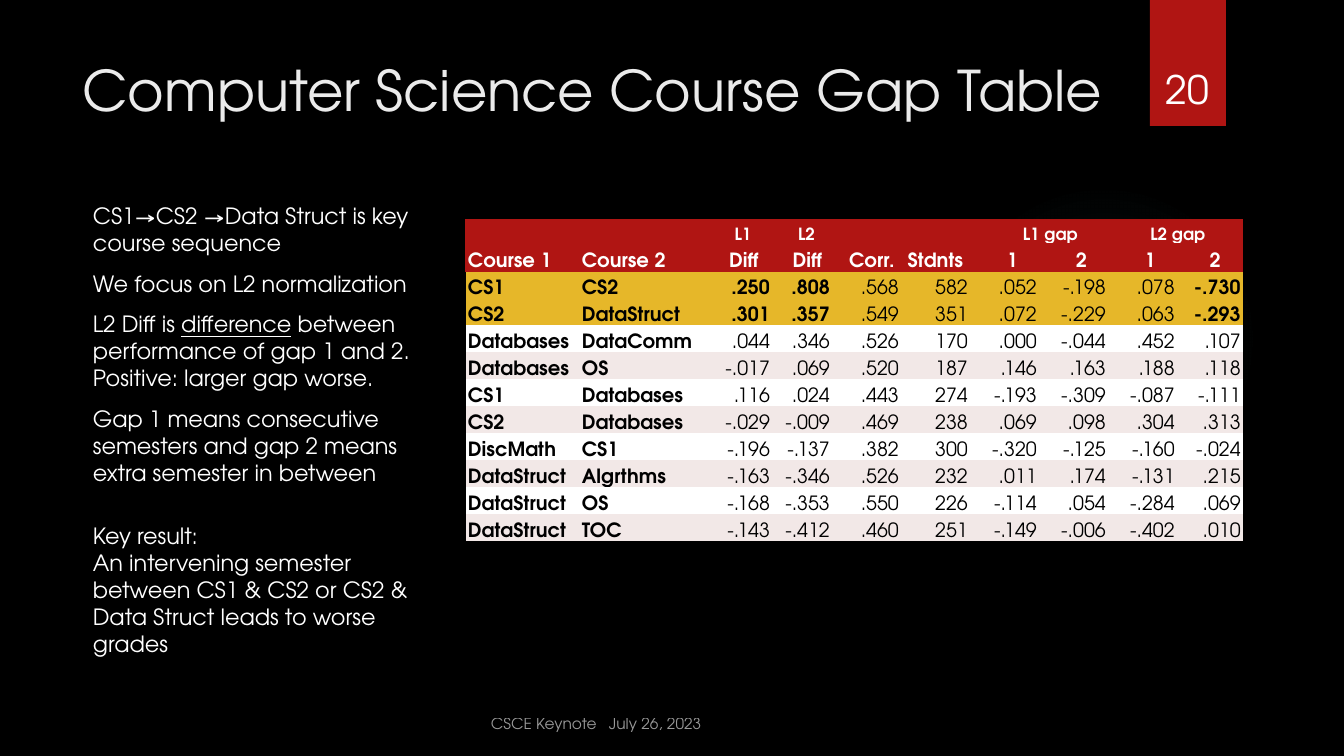
from lxml.etree import SubElement
from pptx import Presentation
from pptx.dml.color import RGBColor
from pptx.enum.shapes import MSO_SHAPE as Shape
from pptx.enum.text import MSO_ANCHOR as Anchor, MSO_AUTO_SIZE as AutoSize, PP_ALIGN as Align
from pptx.oxml import parse_xml
from pptx.oxml.ns import nsdecls, qn
from pptx.util import Pt

FONT = "TeX Gyre Adventor"
RED, GOLD, WHITE, PINK, BLACK = "B01513", "E6B729", "FFFFFF", "F2E8E7", "000000"
NO_GRID_STYLE = "{2D5ABB26-0587-4C30-8999-92F81FD0307C}"
COLUMN_WIDTHS = [114, 125, 67, 60, 69, 69, 69, 69, 69, 66]
ROW_HEIGHTS = [24] + [27] * 11
GROUP_HEADINGS = {2: ("L1", 9, 1), 3: ("L2", 9, 1), 6: ("L1 gap", 23, 2), 8: ("L2 gap", 5, 2)}
HEADINGS = [
    ("Course 1", 0), ("Course 2", 0), ("Diff", 11), ("Diff", 11), ("Corr.", 11),
    ("Stdnts", 0), ("1", 16), ("2", 16), ("1", 16), ("2", 11),
]
COURSE_GAPS = [
    "CS1 CS2 .250 .808 .568 582 .052 -.198 .078 -.730",
    "CS2 DataStruct .301 .357 .549 351 .072 -.229 .063 -.293",
    "Databases DataComm .044 .346 .526 170 .000 -.044 .452 .107",
    "Databases OS -.017 .069 .520 187 .146 .163 .188 .118",
    "CS1 Databases .116 .024 .443 274 -.193 -.309 -.087 -.111",
    "CS2 Databases -.029 -.009 .469 238 .069 .098 .304 .313",
    "DiscMath CS1 -.196 -.137 .382 300 -.320 -.125 -.160 -.024",
    "DataStruct Algrthms -.163 -.346 .526 232 .011 .174 -.131 .215",
    "DataStruct OS -.168 -.353 .550 226 -.114 .054 -.284 .069",
    "DataStruct TOC -.143 -.412 .460 251 -.149 -.006 -.402 .010",
]
NOTES = [
    (["CS1→CS2 →Data Struct is key course sequence"], 0, 10),
    (["We focus on L2 normalization"], 0, 10),
    (["L2 Diff is ", "difference",
      " between performance of gap 1 and 2. Positive: larger gap worse."], 0, 10),
    (["Gap 1 means consecutive semesters and gap 2 means extra semester in between"], 0, 6),
    (["Key result:"], 20, 0),
    (["An intervening semester between CS1 & CS2 or CS2 & Data Struct leads to worse grades"], 0, 0),
]


def px(length):
    return round(length * 914400 / 100.8)


def box(left, top, width, height):
    return px(left), px(top), px(width), px(height)


def rgb(color):
    return RGBColor.from_string(color)


def format_runs(paragraph, size, color, bold=False):
    for run in paragraph.runs:
        run.font.name = FONT
        run.font.size = Pt(size)
        run.font.bold = bold
        run.font.color.rgb = rgb(color)


def add_plain_shape(slide, kind, place, color):
    shape = slide.shapes.add_shape(kind, *place)
    shape.shadow.inherit = False
    shape.line.fill.background()
    shape.fill.solid()
    shape.fill.fore_color.rgb = rgb(color)
    return shape


def add_glow(slide):
    glow = add_plain_shape(slide, Shape.OVAL, box(949, 184, 310, 310), "50B9C1")
    stops = "".join(
        f'<a:gs pos="{position}000"><a:srgbClr val="50B9C1"><a:alpha val="{alpha}000"/></a:srgbClr></a:gs>'
        for position, alpha in [(0, 7), (36, 6), (69, 0), (100, 0)]
    )
    gradient = parse_xml(
        f'<a:gradFill {nsdecls("a")}><a:gsLst>{stops}</a:gsLst><a:path path="circle">'
        '<a:fillToRect l="50000" t="50000" r="50000" b="50000"/></a:path></a:gradFill>'
    )
    properties = glow._element.spPr
    properties.replace(properties.find(qn("a:solidFill")), gradient)


def set_title(slide, text):
    title = slide.shapes.title
    title.left, title.top, title.width, title.height = box(72, 50, 1054, 154)
    frame = title.text_frame
    frame.text = text
    frame.auto_size = AutoSize.NONE
    frame.vertical_anchor = Anchor.TOP
    frame.paragraphs[0].alignment = Align.LEFT
    format_runs(frame.paragraphs[0], 40, "EBEBEB")


def add_text(slide, place, text, size, anchor=Anchor.BOTTOM, alignment=Align.LEFT):
    frame = slide.shapes.add_textbox(*place).text_frame
    frame.word_wrap = True
    frame.vertical_anchor = anchor
    frame.text = text
    paragraph = frame.paragraphs[0]
    paragraph.alignment = alignment
    format_runs(paragraph, size, WHITE)
    return paragraph


def add_footer(slide):
    paragraph = add_text(slide, box(481, 705, 425, 33), "CSCE Keynote\tJuly 26, 2023", 11)
    tabs = SubElement(paragraph._p.get_or_add_pPr(), qn("a:tabLst"))
    SubElement(tabs, qn("a:tab"), pos=str(px(118)), algn="l")
    for color in paragraph._p.iter(qn("a:srgbClr")):
        SubElement(color, qn("a:alpha"), val="60000")


def add_notes(slide):
    frame = slide.shapes.add_textbox(*box(83, 197, 345, 468)).text_frame
    frame.word_wrap = True
    for index, (parts, before, after) in enumerate(NOTES):
        paragraph = frame.add_paragraph() if index else frame.paragraphs[0]
        if before:
            paragraph.space_before = Pt(before)
        paragraph.space_after = Pt(after)
        for part in parts:
            run = paragraph.add_run()
            run.text = part
            run.font.underline = part == "difference"
        format_runs(paragraph, 16, WHITE)


def fill_cell(cell, text, size, color, fill, bold, alignment, indent=0):
    cell.fill.solid()
    cell.fill.fore_color.rgb = rgb(fill)
    cell.vertical_anchor = Anchor.BOTTOM
    cell.margin_left, cell.margin_right = px(2 + indent), px(2)
    cell.margin_top = cell.margin_bottom = 0
    paragraph = cell.text_frame.paragraphs[0]
    if text:
        paragraph.text = text
        paragraph.alignment = alignment
        format_runs(paragraph, size, color, bold)
    else:
        SubElement(paragraph._p, qn("a:endParaRPr"), sz=str(size * 100))


def set_borders(cell, sides):
    properties = cell._tc.get_or_add_tcPr()
    for index, side in enumerate(sides):
        border = parse_xml(
            f'<a:ln{side} {nsdecls("a")} w="12700"><a:solidFill>'
            f'<a:srgbClr val="{RED}"/></a:solidFill></a:ln{side}>'
        )
        properties.insert(index, border)


def fill_headings(table):
    last = len(HEADINGS) - 1
    for column, (text, indent) in enumerate(HEADINGS):
        group, group_indent, span = GROUP_HEADINGS.get(column, ("", 0, 1))
        top, bottom = table.cell(0, column), table.cell(1, column)
        fill_cell(top, group, 12, WHITE, RED, True, Align.CENTER, group_indent)
        alignment = Align.LEFT if column < 2 else Align.CENTER
        fill_cell(bottom, text, 14, WHITE, RED, True, alignment, indent)
        edges = ("L" if column == 0 else "") + ("R" if column == last else "")
        set_borders(top, edges + "TB")
        set_borders(bottom, edges + "T")
        if span > 1:
            top.merge(table.cell(0, column + span - 1))


def fill_course_gaps(table):
    for index, line in enumerate(COURSE_GAPS):
        key_row = index < 2
        fill = GOLD if key_row else (WHITE, PINK)[index % 2]
        for column, text in enumerate(line.split()):
            bold = column < 2 or (key_row and column in (2, 3, 9))
            alignment = Align.LEFT if column < 2 else Align.RIGHT
            fill_cell(table.cell(index + 2, column), text, 14, BLACK, fill, bold, alignment)


def add_gap_table(slide):
    place = box(466, 220, sum(COLUMN_WIDTHS), sum(ROW_HEIGHTS))
    table = slide.shapes.add_table(len(ROW_HEIGHTS), len(COLUMN_WIDTHS), *place).table
    table.first_row = table.horz_banding = False
    table._tbl.tblPr.find(qn("a:tableStyleId")).text = NO_GRID_STYLE
    for column, width in zip(table.columns, COLUMN_WIDTHS):
        column.width = px(width)
    for row, height in zip(table.rows, ROW_HEIGHTS):
        row.height = px(height)
    fill_headings(table)
    fill_course_gaps(table)


def main():
    presentation = Presentation()
    presentation.slide_width, presentation.slide_height = px(1344), px(756)
    slide = presentation.slides.add_slide(presentation.slide_layouts[5])
    slide.background.fill.solid()
    slide.background.fill.fore_color.rgb = rgb(BLACK)
    add_glow(slide)
    add_plain_shape(slide, Shape.RECTANGLE, box(1150, 0, 76, 126), RED)
    set_title(slide, "Computer Science Course Gap Table")
    add_gap_table(slide)
    add_footer(slide)
    add_text(slide, box(1141, 32, 93, 85), "20", 28, alignment=Align.CENTER)
    add_notes(slide)
    presentation.save("out.pptx")


if __name__ == "__main__":
    main()
